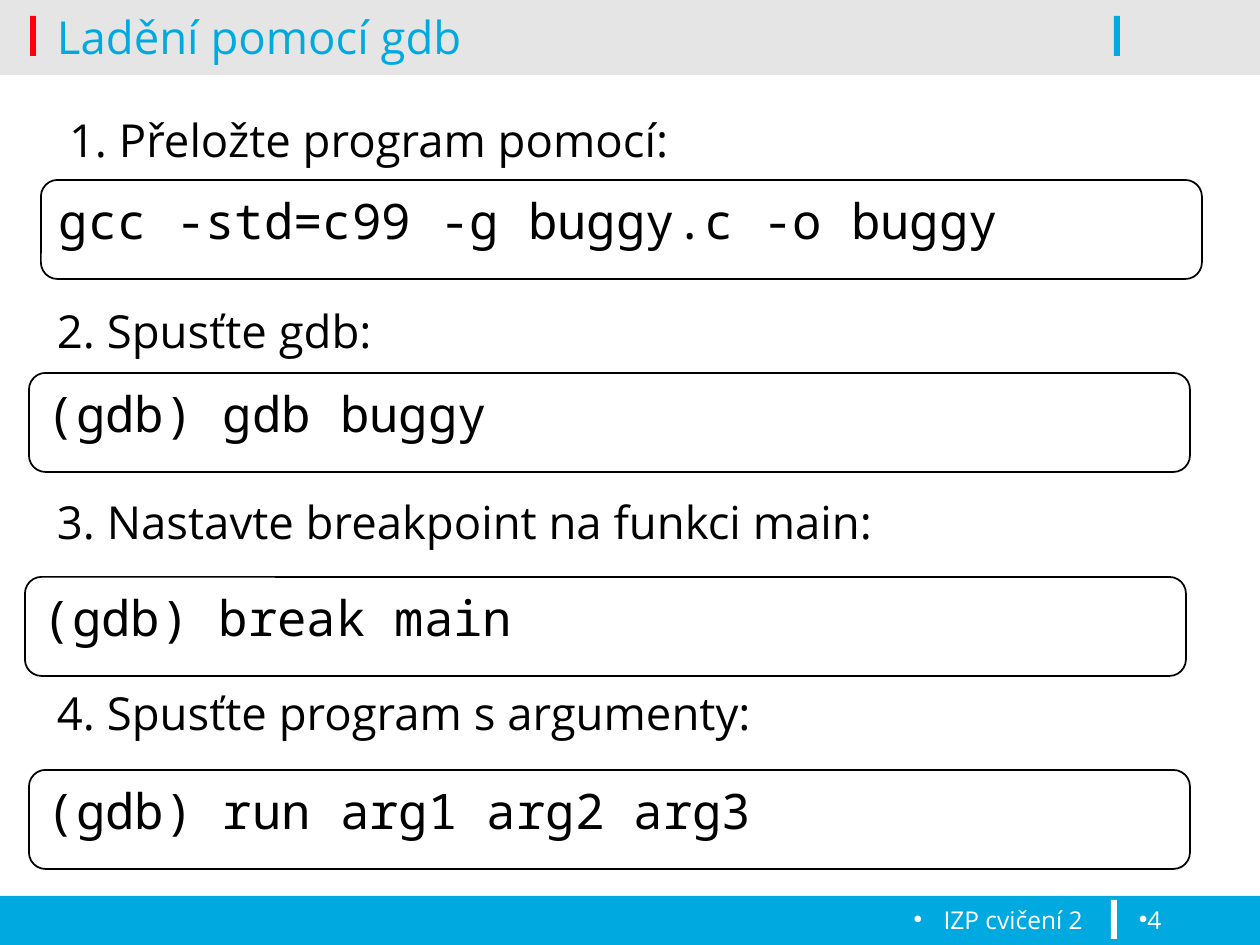
from dataclasses import dataclass

from lxml.etree import SubElement
from pptx import Presentation
from pptx.dml.color import RGBColor
from pptx.enum.shapes import MSO_SHAPE
from pptx.enum.text import MSO_ANCHOR, PP_ALIGN
from pptx.oxml.ns import qn
from pptx.util import Emu, Pt


@dataclass(frozen=True)
class Theme:
    """Colours, fonts and type sizes of the slide."""
    black: str = "000000"
    white: str = "FFFFFF"
    blue: str = "00A9E0"
    red: str = "FE000C"
    grey: str = "E5E5E5"
    sans: str = "Open Sans"
    mono: str = "Noto Sans Mono"
    heading: int = 26
    code: int = 28
    footer: int = 14


THEME = Theme()
EMU_PER_PX = 914400 // 126
STEP_GAP = 78
STEPS = [
    "1. Přeložte program pomocí:",
    "2. Spusťte gdb:",
    "3. Nastavte breakpoint na funkci main:",
    "4. Spusťte program s argumenty:",
]
COMMANDS = [
    (41, 180, "gcc -std=c99 -g buggy.c -o buggy"),
    (29, 373, "(gdb) gdb buggy"),
    (25, 577, "(gdb) break main"),
    (29, 770, "(gdb) run arg1 arg2 arg3"),
]


def px(length):
    """Turn pixels into EMU."""
    return Emu(length * EMU_PER_PX)


def set_font(paragraph, size, color, name=THEME.sans):
    """Set the font that a whole paragraph shares."""
    font = paragraph.font
    font.size, font.name = Pt(size), name
    font.color.rgb = RGBColor.from_string(color)


def set_frame(shape, anchor):
    """Give a text frame wrapping, standard insets and an anchor."""
    frame = shape.text_frame
    frame.word_wrap = True
    frame.vertical_anchor = anchor
    frame.margin_left = frame.margin_right = px(13)
    frame.margin_top = frame.margin_bottom = px(6)
    return frame


def add_shape(page, kind, place, fill):
    """Add a filled preset shape without line or shadow."""
    shape = page.shapes.add_shape(kind, *map(px, place))
    shape.shadow.inherit = False
    shape.fill.solid()
    shape.fill.fore_color.rgb = RGBColor.from_string(fill)
    shape.line.fill.background()
    return shape


def add_bars(page):
    """Draw the header and footer bands with their markers."""
    for place, fill in [
        ((0, 896, 1260, 49), THEME.blue),
        ((0, 0, 1260, 75), THEME.grey),
        ((30, 16, 6, 40), THEME.red),
        ((1111, 900, 6, 39), THEME.white),
        ((1114, 16, 6, 40), THEME.blue),
    ]:
        add_shape(page, MSO_SHAPE.RECTANGLE, place, fill)


def add_title(page, text):
    """Place and format the title placeholder in front of the bands."""
    title = page.shapes.title
    title.left, title.top, title.width, title.height = map(px, (44, -14, 1061, 100))
    frame = set_frame(title, MSO_ANCHOR.MIDDLE)
    frame.text = text
    paragraph = frame.paragraphs[0]
    paragraph.alignment = PP_ALIGN.LEFT
    set_font(paragraph, THEME.heading, THEME.blue)
    title._element.getparent().append(title._element)


def add_steps(page):
    """Write the evenly spaced step headings."""
    box = page.shapes.add_textbox(*map(px, (44, 106, 1191, 774)))
    frame = set_frame(box, MSO_ANCHOR.TOP)
    frame.text = "\n".join(STEPS)
    for index, paragraph in enumerate(frame.paragraphs):
        if index:
            paragraph.space_before = Pt(STEP_GAP)
        else:
            paragraph._p.get_or_add_pPr().set("marL", str(px(12)))
        set_font(paragraph, THEME.heading, THEME.black)


def add_command(page, left, top, text):
    """Add a rounded box holding one command."""
    box = add_shape(page, MSO_SHAPE.ROUNDED_RECTANGLE, (left, top, 1161, 99), THEME.white)
    box.line.color.rgb = RGBColor.from_string(THEME.black)
    box.line.width = Pt(1)
    frame = set_frame(box, MSO_ANCHOR.TOP)
    frame.text = text
    paragraph = frame.paragraphs[0]
    paragraph.alignment = PP_ALIGN.LEFT
    set_font(paragraph, THEME.code, THEME.black, THEME.mono)


def add_footer(page, place, text, alignment, hanging):
    """Add a bulleted footer text."""
    box = page.shapes.add_textbox(*map(px, place))
    frame = set_frame(box, MSO_ANCHOR.MIDDLE)
    frame.text = text
    paragraph = frame.paragraphs[0]
    paragraph.alignment = alignment
    properties = paragraph._p.get_or_add_pPr()
    properties.set("marL", str(px(hanging)))
    properties.set("indent", str(-px(hanging)))
    SubElement(properties, qn("a:buFont"), typeface="Arial")
    SubElement(properties, qn("a:buChar"), char="•")
    set_font(paragraph, THEME.footer, THEME.white)


def main():
    """Build and save the slide."""
    deck = Presentation()
    deck.slide_width, deck.slide_height = px(1260), px(945)
    page = deck.slides.add_slide(deck.slide_layouts[5])
    add_bars(page)
    add_title(page, "Ladění pomocí gdb")
    add_steps(page)
    add_footer(page, (15, 897, 1081, 45), "IZP cvičení 2", PP_ALIGN.RIGHT, 30)
    add_footer(page, (1126, 897, 113, 45), "4", PP_ALIGN.LEFT, 0)
    for left, top, text in COMMANDS:
        add_command(page, left, top, text)
    deck.save("out.pptx")


if __name__ == "__main__":
    main()
